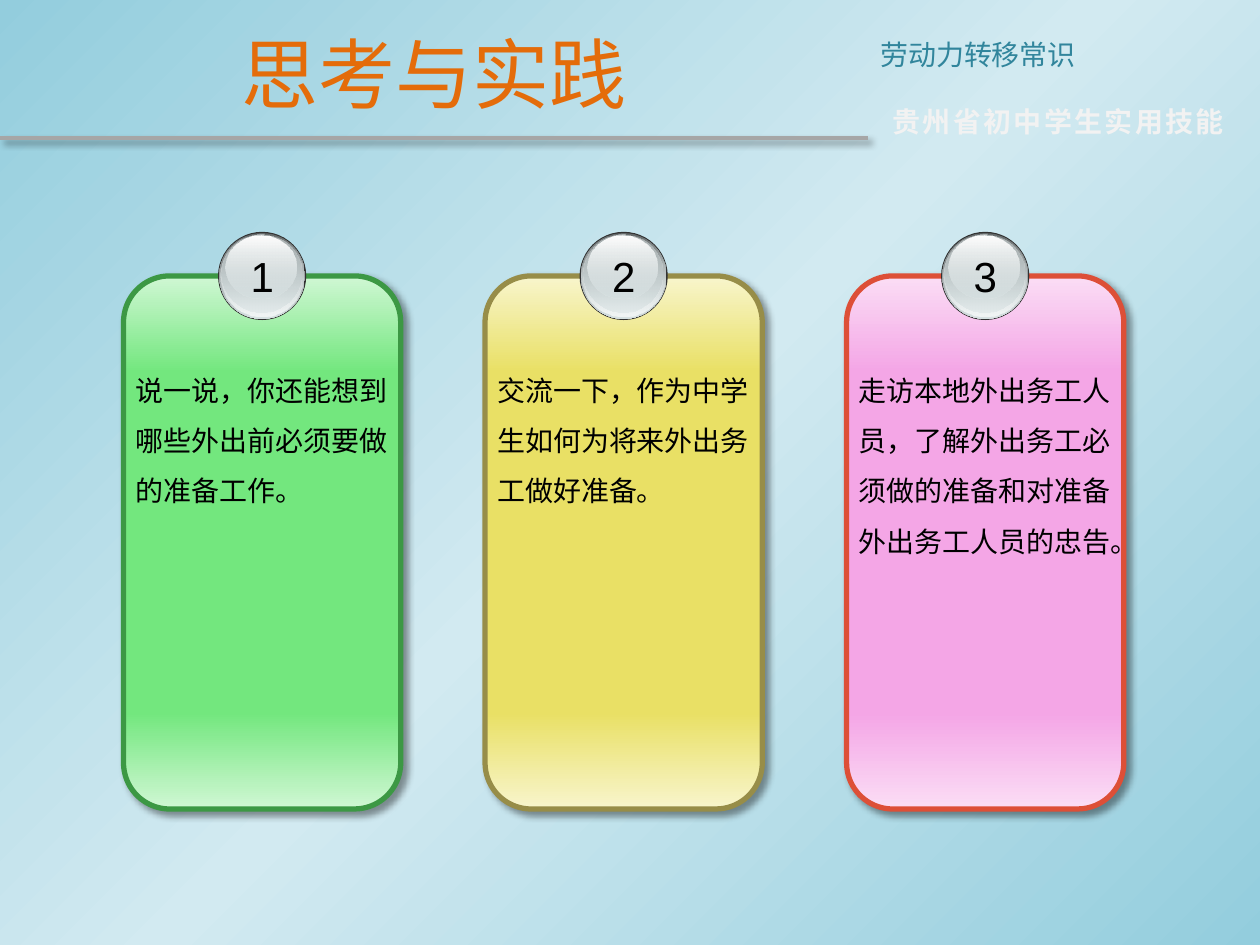
import pptx
import pptx.dml.color
import pptx.enum.shapes
import pptx.enum.text
import pptx.oxml
import pptx.oxml.ns
import pptx.util

Pt = pptx.util.Pt
qn = pptx.oxml.ns.qn
Shape = pptx.enum.shapes.MSO_SHAPE
Align = pptx.enum.text.PP_ALIGN
Fit = pptx.enum.text.MSO_AUTO_SIZE
NS = 'xmlns:a="http://schemas.openxmlformats.org/drawingml/2006/main"'

THEME = {
    "han": "Noto Sans CJK SC", "latin": "Arial",
    "title": 44, "body": 16, "number": 24,
    "orange": "E46C0A", "teal": "31859C", "white": "F2F2F2",
    "black": "000000", "rule": "A6A6A6", "rim": "333333",
    "sky": [(0, "93CDDD"), (50, "D2EAF1"), (100, "93CDDD")],
}

TITLE = "思考与实践"
TOPIC = "劳动力转移常识"
SERIES = "贵州省初中学生实用技能"
CARDS = [
    ("说一说，你还能想到哪些外出前必须要做的准备工作。", "D0F7D4", "73E77E", "3C9844"),
    ("交流一下，作为中学生如何为将来外出务工做好准备。", "F8F5CC", "E9E065", "978D48"),
    ("走访本地外出务工人员，了解外出务工必须做的准备和对准备外出务工人员的忠告。",
     "FBDDF5", "F4A6E6", "DD4F37"),
]
BALL = [
    ((54.7, 133.2, 49, 49), [(0, "636869"), (100, "D6E1E2")]),
    ((55.4, 133.2, 47.5, 47.5), [(0, "D6E1E2", 0), (100, "F1F5F5")]),
    ((56.2, 133.9, 45.4, 44.6), [(0, "AAB2B3"), (100, "D6E1E2", 48)]),
    ((58.3, 134.6, 40.3, 36), [(0, "FFFFFF"), (100, "D6E1E2", 38)]),
]
LEFT, PITCH, WIDTH = 70.6, 206.6, 158.4


def color(code):
    return pptx.dml.color.RGBColor.from_string(code)


def blend(fill, owner, stops, angle):
    fill.solid()
    marks = ""
    for spot, code, *alpha in stops:
        clear = "".join(f'<a:alpha val="{a * 1000}"/>' for a in alpha)
        marks += f'<a:gs pos="{spot * 1000}"><a:srgbClr val="{code}">{clear}</a:srgbClr></a:gs>'
    grad = pptx.oxml.parse_xml(
        f'<a:gradFill {NS} rotWithShape="1"><a:gsLst>{marks}</a:gsLst>'
        f'<a:lin ang="{angle * 60000}" scaled="0"/></a:gradFill>')
    owner.replace(owner.find(qn("a:solidFill")), grad)


def shade(shape):
    props = shape._element.spPr
    old = props.find(qn("a:effectLst"))
    if old is not None:
        props.remove(old)
    props.append(pptx.oxml.parse_xml(
        f'<a:effectLst {NS}><a:outerShdw blurRad="{Pt(4)}" dist="{Pt(3)}" dir="2700000" '
        'algn="tl" rotWithShape="0"><a:srgbClr val="000000"><a:alpha val="40000"/>'
        '</a:srgbClr></a:outerShdw></a:effectLst>'))


def write(shape, text, size, tint, face="han", align=Align.LEFT, wrap=True, fit=Fit.SHAPE_TO_FIT_TEXT):
    frame = shape.text_frame
    frame.word_wrap = wrap
    frame.auto_size = fit
    frame.text = text
    para = frame.paragraphs[0]
    para.alignment = align
    para.font.size = Pt(THEME[size])
    para.font.name = THEME[face]
    para.font.color.rgb = color(THEME[tint])
    props = para._p.pPr.find(qn("a:defRPr"))
    props.append(pptx.oxml.parse_xml(f'<a:ea {NS} typeface="{THEME[face]}"/>'))
    return para, props


def label(shapes, box, *words, **style):
    return write(shapes.add_textbox(*map(Pt, box)), *words, **style)


def plate(shapes, kind, box):
    shape = shapes.add_shape(kind, *map(Pt, box))
    shape.shadow.inherit = False
    shape.line.fill.background()
    return shape


def head(slide):
    shapes = slide.shapes
    title = shapes.title
    title.left, title.top, title.width, title.height = map(Pt, (0, 5, 496, 73.4))
    write(title, TITLE, "title", "orange", align=Align.CENTER, fit=Fit.NONE)
    title.text_frame.vertical_anchor = pptx.enum.text.MSO_ANCHOR.MIDDLE

    rule = shapes.add_connector(
        pptx.enum.shapes.MSO_CONNECTOR.STRAIGHT, Pt(0), Pt(79), Pt(496), Pt(79))
    rule.line.color.rgb = color(THEME["rule"])
    rule.line.width = Pt(2.25)
    shade(rule)

    label(shapes, (496, 18, 224, 26.6), TOPIC, "body", "teal", align=Align.JUSTIFY)
    para, props = label(shapes, (503, 56, 208, 26.6), SERIES, "body", "white", wrap=False)
    para.font.bold = True
    props.set("spc", "140")


def card(shapes, index, text, pale, main, edge):
    left = LEFT + index * PITCH
    group = shapes.add_group_shape().shapes
    panel = plate(group, Shape.ROUNDED_RECTANGLE, (left, 157.7, WIDTH, 304.6))
    stops = [(0, pale), (18, main), (82, main), (100, pale)]
    blend(panel.fill, panel._element.spPr, stops, 90)
    panel.line.color.rgb = color(edge)
    panel.line.width = Pt(3)
    shade(panel)

    para, props = label(group, (left, 200.2, WIDTH, 92), text, "body", "black")
    para.line_spacing = 1.5

    rim = plate(group, Shape.OVAL, (left + 54, 132.5, 50.4, 50.4))
    rim.fill.solid()
    rim.fill.fore_color.rgb = color(THEME["rim"])
    for (x, y, wide, high), stops in BALL:
        layer = plate(group, Shape.OVAL, (left + x, y, wide, high))
        blend(layer.fill, layer._element.spPr, stops, 90)
    label(group, (left + 65.3, 139.7, 28, 36), str(index + 1), "number", "black",
          face="latin", align=Align.CENTER, wrap=False)


def main():
    deck = pptx.Presentation()
    deck.slide_width, deck.slide_height = Pt(720), Pt(540)
    slide = deck.slides.add_slide(deck.slide_layouts.get_by_name("Title Only"))
    fill = slide.background.fill
    blend(fill, slide._element.find(".//" + qn("p:bgPr")), THEME["sky"], 45)
    head(slide)
    for index, item in enumerate(CARDS):
        card(slide.shapes, index, *item)
    deck.save("out.pptx")


if __name__ == "__main__":
    main()
